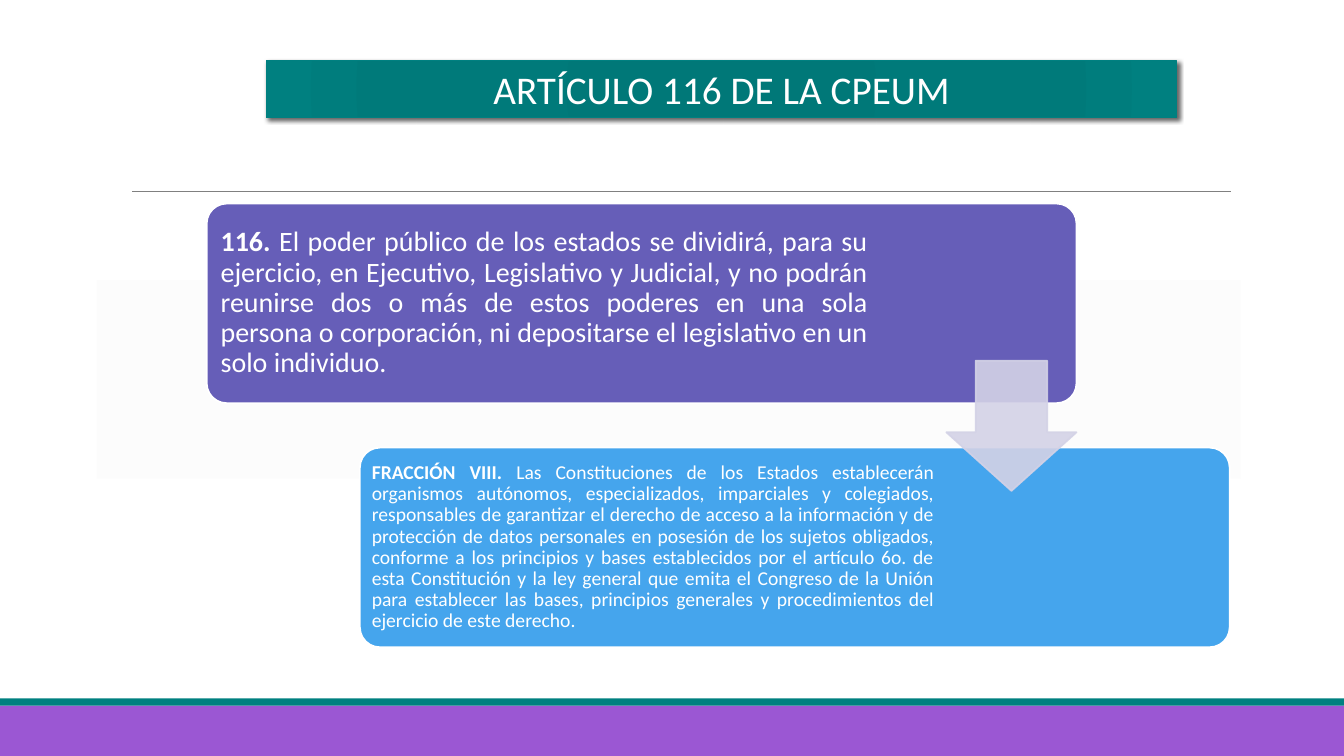
from lxml.etree import SubElement
from pptx import Presentation
from pptx.dml.color import RGBColor
from pptx.enum.shapes import MSO_CONNECTOR, MSO_SHAPE as SHAPE
from pptx.enum.text import MSO_ANCHOR as ANCHOR, PP_ALIGN as ALIGN
from pptx.oxml import parse_xml
from pptx.oxml.ns import nsdecls, qn
from pptx.util import Cm, Pt

WIDTH, HEIGHT = 33.87, 19.05
FONT = "Calibri"
WHITE, TEAL, PURPLE = "FFFFFF", "008080", "9B57D3"
VIOLET, BLUE, LILAC = "665EB8", "45A5ED", "D3D2E6"
CARD_W, CARD_H, CARD_PAD = 21.92, 5.03, 0.15

ARTICLE = (
    "El poder público de los estados se dividirá, para su ejercicio, en Ejecutivo, "
    "Legislativo y Judicial, y no podrán reunirse dos o más de estos poderes en una "
    "sola persona o corporación, ni depositarse el legislativo en un solo individuo."
)
FRACTION = (
    "Las Constituciones de los Estados establecerán organismos autónomos, "
    "especializados, imparciales y colegiados, responsables de garantizar el derecho "
    "de acceso a la información y de protección de datos personales en posesión de los "
    "sujetos obligados, conforme a los principios y bases establecidos por el artículo "
    "6o. de esta Constitución y la ley general que emita el Congreso de la Unión para "
    "establecer las bases, principios generales y procedimientos del ejercicio de este "
    "derecho."
)


def rgb(color):
    return RGBColor.from_string(color)


def add_block(slide, kind, left, top, width, height, fill, line=None, line_pt=1.25, alpha=100):
    """Add a flat shape; alpha is the opacity in percent of fill and line."""
    sp = slide.shapes.add_shape(kind, Cm(left), Cm(top), Cm(width), Cm(height))
    sp.shadow.inherit = False
    sp.fill.solid()
    sp.fill.fore_color.rgb = rgb(fill)
    if line:
        sp.line.color.rgb = rgb(line)
        sp.line.width = Pt(line_pt)
    else:
        sp.line.fill.background()
    if alpha < 100:
        for clr in sp._element.spPr.iter(qn("a:srgbClr")):
            SubElement(clr, qn("a:alpha")).set("val", str(alpha * 1000))
    return sp


def add_run(p, text, size, bold=False):
    r = p.add_run()
    r.text = text
    r.font.name, r.font.size, r.font.bold = FONT, Pt(size), bold
    r.font.color.rgb = rgb(WHITE)


def add_card(slide, left, top, fill, heading, body, size, text_width, inset):
    card = add_block(slide, SHAPE.ROUNDED_RECTANGLE, left, top, CARD_W, CARD_H, fill, WHITE)
    card.adjustments[0] = 0.1
    box = slide.shapes.add_textbox(Cm(left + CARD_PAD), Cm(top + CARD_PAD),
                                   Cm(text_width), Cm(CARD_H - 2 * CARD_PAD))
    tf = box.text_frame
    tf.word_wrap = True
    tf.vertical_anchor = ANCHOR.MIDDLE
    tf.margin_left = tf.margin_top = tf.margin_right = tf.margin_bottom = Cm(inset)
    p = tf.paragraphs[0]
    p.alignment = ALIGN.JUSTIFY
    p.line_spacing = 0.9
    add_run(p, heading + " ", size, bold=True)
    add_run(p, body, size)


def add_rule(slide, left, right, top):
    line = slide.shapes.add_connector(MSO_CONNECTOR.STRAIGHT,
                                      Cm(left), Cm(top), Cm(right), Cm(top))
    line.line.color.rgb = rgb("808080")
    line.line.width = Pt(0.5)
    SubElement(line._element.spPr, qn("a:effectLst"))


def add_arrow(slide, left, top, size):
    arrow = add_block(slide, SHAPE.DOWN_ARROW, left, top, size, size, LILAC, LILAC, alpha=90)
    arrow.adjustments[0] = 0.55
    arrow.adjustments[1] = 0.45


def set_radial_fill(sp, stops):
    """Replace the solid fill by a circular gradient of (percent, colour) stops."""
    gs = "".join(f'<a:gs pos="{pos * 1000}"><a:srgbClr val="{color}"/></a:gs>'
                 for pos, color in stops)
    grad = parse_xml(
        f'<a:gradFill {nsdecls("a")} rotWithShape="1"><a:gsLst>{gs}</a:gsLst>'
        '<a:path path="circle"><a:fillToRect l="100000" t="100000" r="100000" b="100000"/>'
        '</a:path></a:gradFill>')
    spPr = sp._element.spPr
    spPr.replace(spPr.find(qn("a:solidFill")), grad)


def add_shadow(sp):
    effects = sp._element.spPr.find(qn("a:effectLst"))
    effects.append(parse_xml(
        f'<a:outerShdw {nsdecls("a")} blurRad="{Pt(3)}" dist="{Pt(2)}" dir="2700000" '
        'algn="tl" rotWithShape="0"><a:srgbClr val="000000"><a:alpha val="60000"/>'
        '</a:srgbClr></a:outerShdw>'))


def add_title(slide, text):
    title = add_block(slide, SHAPE.RECTANGLE, 6.71, 1.52, 22.94, 1.45, TEAL, TEAL, 1)
    set_radial_fill(title, [(0, "007777"), (34, "007878"), (70, "007A7A"), (100, TEAL)])
    add_shadow(title)
    tf = title.text_frame
    tf.word_wrap = True
    tf.vertical_anchor = ANCHOR.TOP
    p = tf.paragraphs[0]
    p.alignment = ALIGN.CENTER
    add_run(p, text, 28)


def main():
    prs = Presentation()
    prs.slide_width, prs.slide_height = Cm(WIDTH), Cm(HEIGHT)
    slide = prs.slides.add_slide(prs.slide_layouts[6])

    add_block(slide, SHAPE.RECTANGLE, 0, 17.78, WIDTH, 1.27, PURPLE)
    add_block(slide, SHAPE.RECTANGLE, 0, 17.6, WIDTH, 0.18, TEAL)
    add_rule(slide, 3.33, 31.01, 4.83)
    add_block(slide, SHAPE.RECTANGLE, 2.44, 7.06, 28.83, 5, "F2F2F2", alpha=18)
    add_card(slide, 5.21, 5.13, VIOLET, "116.", ARTICLE, 20, 16.71, 0.2)
    add_card(slide, 9.07, 11.28, BLUE, "FRACCIÓN VIII.", FRACTION, 14, 14.48, 0.15)
    add_arrow(slide, 23.85, 9.09, 3.28)
    add_title(slide, "ARTÍCULO 116 DE LA CPEUM")
    prs.save("out.pptx")


if __name__ == "__main__":
    main()
